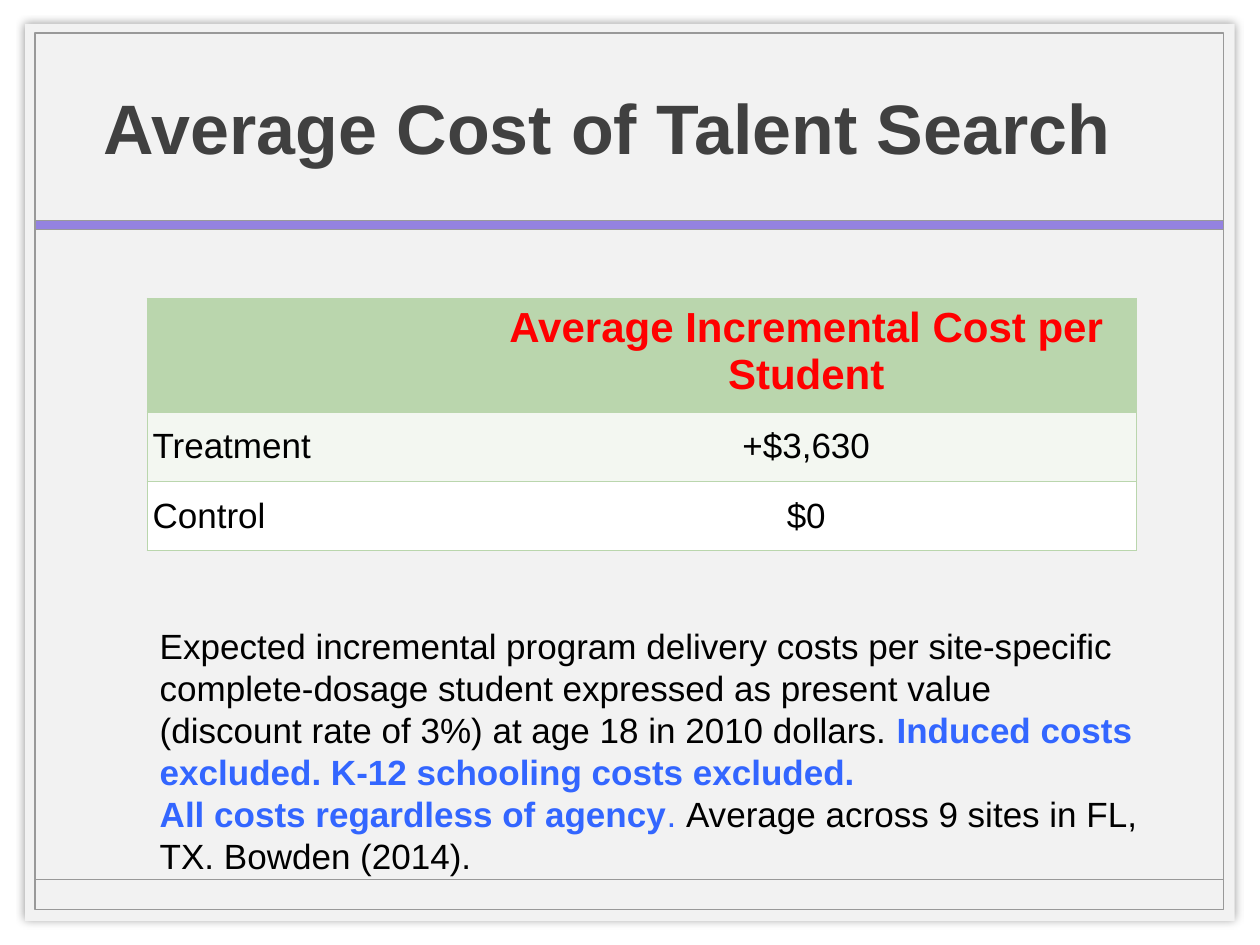
from lxml import etree
from pptx import Presentation
from pptx.dml.color import RGBColor
from pptx.enum import shapes, text
from pptx.oxml import ns
from pptx.util import Pt

HUE = {"panel": "F2F2F2", "rule": "999999", "bar": "9482E0", "title": "404040",
       "head": "BAD6AD", "band": "F3F7F1", "white": "FFFFFF", "red": "FF0000",
       "ink": "000000", "blue": "3366FF"}
MID, LEFT = text.PP_ALIGN.CENTER, text.PP_ALIGN.LEFT


def node(root, tag, **attrs):
    return etree.SubElement(root, ns.qn("a:" + tag), attrs)


def write(para, words, size, hue, bold=False):
    run = para.add_run()
    run.text = words
    for key, val in {"name": "Arial", "size": Pt(size), "bold": bold}.items():
        setattr(run.font, key, val)
    run.font.color.rgb = RGBColor.from_string(HUE[hue])


deck = Presentation()
deck.slide_width, deck.slide_height = Pt(720), Pt(540)
slide = deck.slides.add_slide(deck.slide_layouts[6])

plates = [
    ((14.4, 13.7, 691.2, 512.6), "panel", None),
    ((20.2, 18.7, 679, 501.1), None, 1),
    ((20.2, 126, 679, 5), "bar", 0.25),
]
for place, fill, width in plates:
    plate = slide.shapes.add_shape(shapes.MSO_SHAPE.RECTANGLE, *map(Pt, place))
    plate.shadow.inherit = False
    if fill:
        plate.fill.solid()
        plate.fill.fore_color.rgb = RGBColor.from_string(HUE[fill])
    else:
        plate.fill.background()
    if width:
        plate.line.width = Pt(width)
        plate.line.color.rgb = RGBColor.from_string(HUE["rule"])
    else:
        plate.line.fill.background()
        glow = plate._element.spPr.find(ns.qn("a:effectLst"))
        cast = node(glow, "outerShdw", blurRad=str(Pt(5)), dist="0", dir="0",
                    algn="ctr", rotWithShape="0")
        node(node(cast, "srgbClr", val=HUE["ink"]), "alpha", val="40000")

rule = slide.shapes.add_connector(shapes.MSO_CONNECTOR.STRAIGHT,
                                  Pt(20.2), Pt(502.6), Pt(699.2), Pt(502.6))
rule.line.width = Pt(1)
rule.line.color.rgb = RGBColor.from_string(HUE["rule"])
node(rule._element.spPr, "effectLst")

notes = [
    ((44.6, 19.4, 615.6, 105.8), MID, text.MSO_ANCHOR.MIDDLE,
     [[("Average Cost of Talent Search ", 40, "title", True)]]),
    ((84.2, 353.5, 575.3, 152.6), LEFT, text.MSO_ANCHOR.TOP,
     [[("Expected incremental program delivery costs per site-specific "
        "complete-dosage student expressed as present value "
        "(discount rate of 3%) at age 18 in 2010 dollars. ", 20, "ink"),
       ("Induced costs excluded. K-12 schooling costs excluded.", 20, "blue", True)],
      [("All costs regardless of agency", 20, "blue", True),
       (". ", 20, "blue"),
       ("Average across 9 sites in FL, TX. Bowden (2014).", 20, "ink")]]),
]
for place, align, anchor, paras in notes:
    frame = slide.shapes.add_textbox(*map(Pt, place)).text_frame
    frame.word_wrap = True
    frame.vertical_anchor = anchor
    for i, runs in enumerate(paras):
        para = frame.add_paragraph() if i else frame.paragraphs[0]
        para.alignment = align
        for run in runs:
            write(para, *run)

rows = [
    ("head", 60.6, "", "Average Incremental Cost per Student"),
    ("band", 39.6, "Treatment", "+$3,630"),
    ("white", 39.6, "Control", "$0"),
]
holder = slide.shapes.add_table(3, 2, Pt(84.2), Pt(170.6), Pt(565.2), Pt(139.8))
table = holder.table
style = table._tbl.tblPr.find(ns.qn("a:tableStyleId"))
style.text = "{2D5ABB26-0587-4C30-8999-92F81FD0307C}"
for col, width in zip(table.columns, (187.9, 377.3)):
    col.width = Pt(width)
for r, (fill, height, *words) in enumerate(rows):
    table.rows[r].height = Pt(height)
    for c, word in enumerate(words):
        cell = table.cell(r, c)
        form = {"margin_left": Pt(3), "margin_right": Pt(3),
                "margin_top": Pt(3.6), "margin_bottom": Pt(3.6),
                "vertical_anchor": text.MSO_ANCHOR.MIDDLE if r else text.MSO_ANCHOR.TOP}
        for key, val in form.items():
            setattr(cell, key, val)
        for side in ("RTB" if c else "LTB"):
            edge = node(cell._tc.get_or_add_tcPr(), "ln" + side, w=str(Pt(1)))
            node(node(edge, "solidFill"), "srgbClr", val=HUE["head"])
        cell.fill.solid()
        cell.fill.fore_color.rgb = RGBColor.from_string(HUE[fill])
        para = cell.text_frame.paragraphs[0]
        para.alignment = MID if c else LEFT
        if word:
            write(para, word, 20 if r else 24, "ink" if r else "red", not r)

deck.save("out.pptx")
